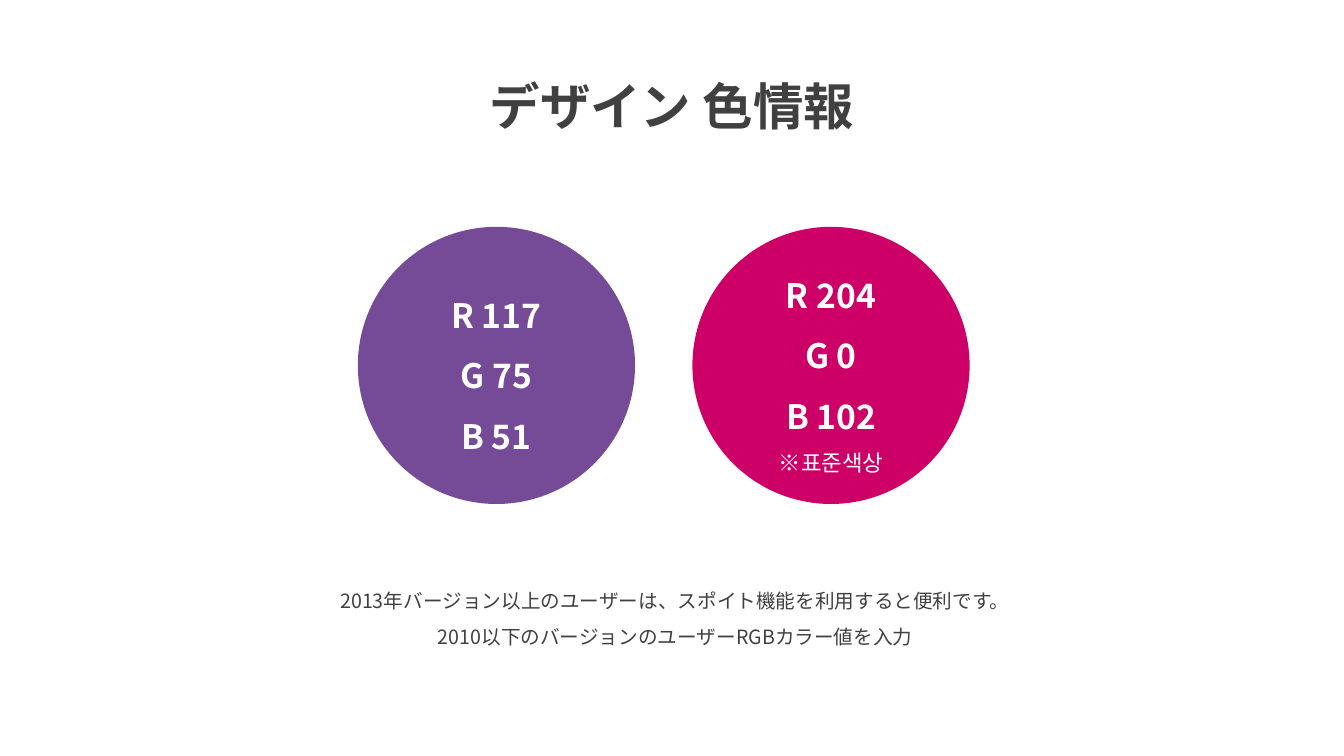
from dataclasses import dataclass

from lxml.etree import SubElement
from pptx import Presentation
from pptx.dml.color import RGBColor
from pptx.enum.shapes import MSO_SHAPE as Preset
from pptx.enum.text import MSO_ANCHOR as Anchor, MSO_AUTO_SIZE as AutoSize, PP_ALIGN as Align
from pptx.oxml.ns import qn
from pptx.util import Pt

TITLE = "デザイン 色情報"
SWATCHES = [
    {"rgb": "754B97", "values": ["R 117", "G 75", "B 51"], "remark": None},
    {"rgb": "CC0066", "values": ["R 204", "G 0", "B 102"], "remark": "※표준색상"},
]
USAGE = [
    "2013年バージョン以上のユーザーは、スポイト機能を利用すると便利です。",
    "2010以下のバージョンのユーザーRGBカラー値を入力",
]


@dataclass(frozen=True)
class Theme:
    font: str = "Noto Sans CJK KR"
    dark: str = "404040"
    light: str = "FFFFFF"
    title_size: int = 36
    value_size: int = 24
    remark_size: int = 16
    usage_size: int = 14
    line_spacing: float = 1.5


THEME = Theme()
PAGE_SIZE = (960, 540)
TITLE_BOX = (305.3, 28.8, 349.2, 65.5)
USAGE_BOX = (181.4, 409, 601.9, 55.4)
CIRCLE_LEFT, CIRCLE_TOP, DIAMETER, CIRCLE_STEP = 255.6, 162, 198, 239


def write_lines(frame, lines, color):
    """Fill a text frame with centred (text, size, bold) lines."""
    frame.word_wrap = True
    for index, (text, size, bold) in enumerate(lines):
        para = frame.add_paragraph() if index else frame.paragraphs[0]
        para.text = text
        para.alignment = Align.CENTER
        para.line_spacing = THEME.line_spacing
        font = para.font
        font.size, font.bold = Pt(size), bold
        font.color.rgb = RGBColor.from_string(color)
        font.name = THEME.font
        # East Asian letters take their typeface from a separate element.
        properties = para._p.pPr.find(qn("a:defRPr"))
        SubElement(properties, qn("a:ea")).set("typeface", THEME.font)


def add_text(page, place, lines):
    box = page.shapes.add_textbox(*map(Pt, place))
    write_lines(box.text_frame, lines, THEME.dark)
    box.text_frame.auto_size = AutoSize.SHAPE_TO_FIT_TEXT


def add_swatch(page, left, swatch):
    circle = page.shapes.add_shape(
        Preset.OVAL, Pt(left), Pt(CIRCLE_TOP), Pt(DIAMETER), Pt(DIAMETER))
    circle.shadow.inherit = False
    circle.fill.solid()
    circle.fill.fore_color.rgb = RGBColor.from_string(swatch["rgb"])
    circle.line.fill.background()
    circle.text_frame.vertical_anchor = Anchor.MIDDLE
    lines = [(value, THEME.value_size, True) for value in swatch["values"]]
    if swatch["remark"]:
        lines.append((swatch["remark"], THEME.remark_size, False))
    write_lines(circle.text_frame, lines, THEME.light)


def main():
    deck = Presentation()
    deck.slide_width, deck.slide_height = map(Pt, PAGE_SIZE)
    page = deck.slides.add_slide(deck.slide_layouts[6])
    add_text(page, TITLE_BOX, [(TITLE, THEME.title_size, True)])
    for column, swatch in enumerate(SWATCHES):
        add_swatch(page, CIRCLE_LEFT + column * CIRCLE_STEP, swatch)
    add_text(page, USAGE_BOX, [(line, THEME.usage_size, False) for line in USAGE])
    deck.save("out.pptx")


if __name__ == "__main__":
    main()
